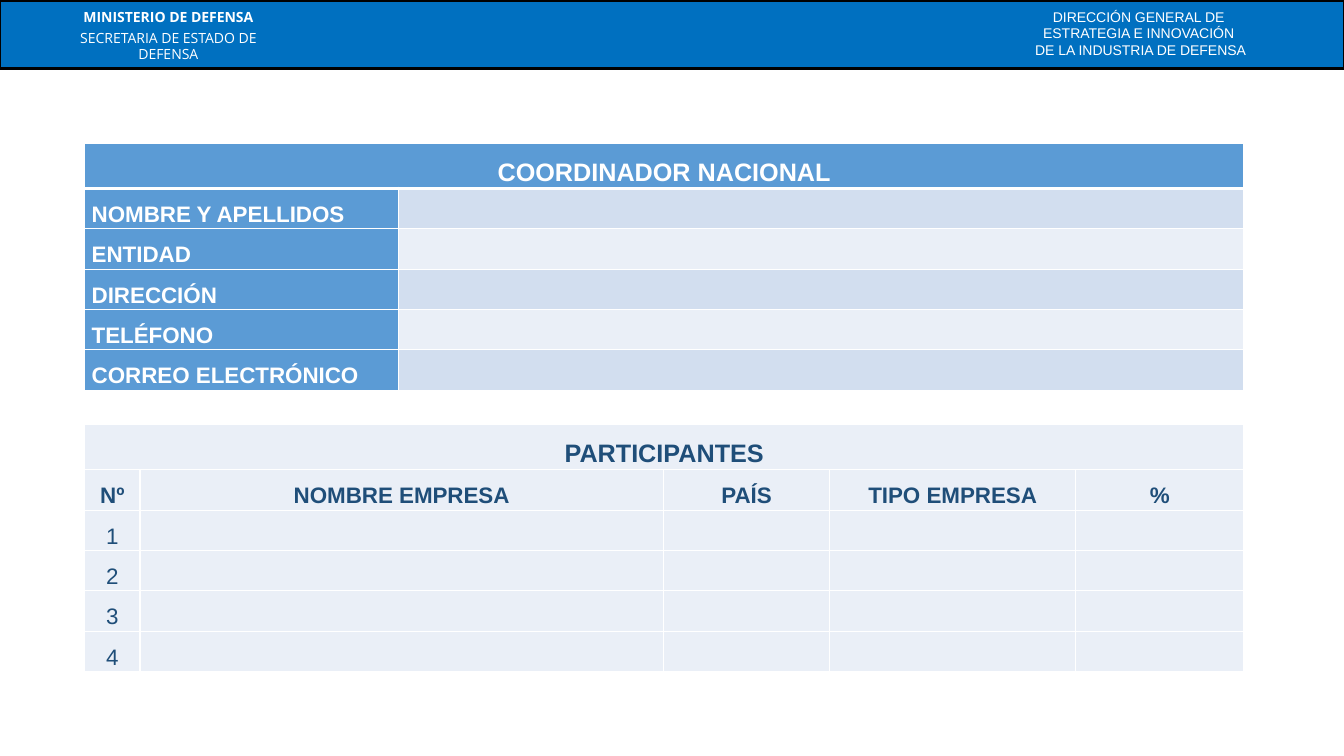
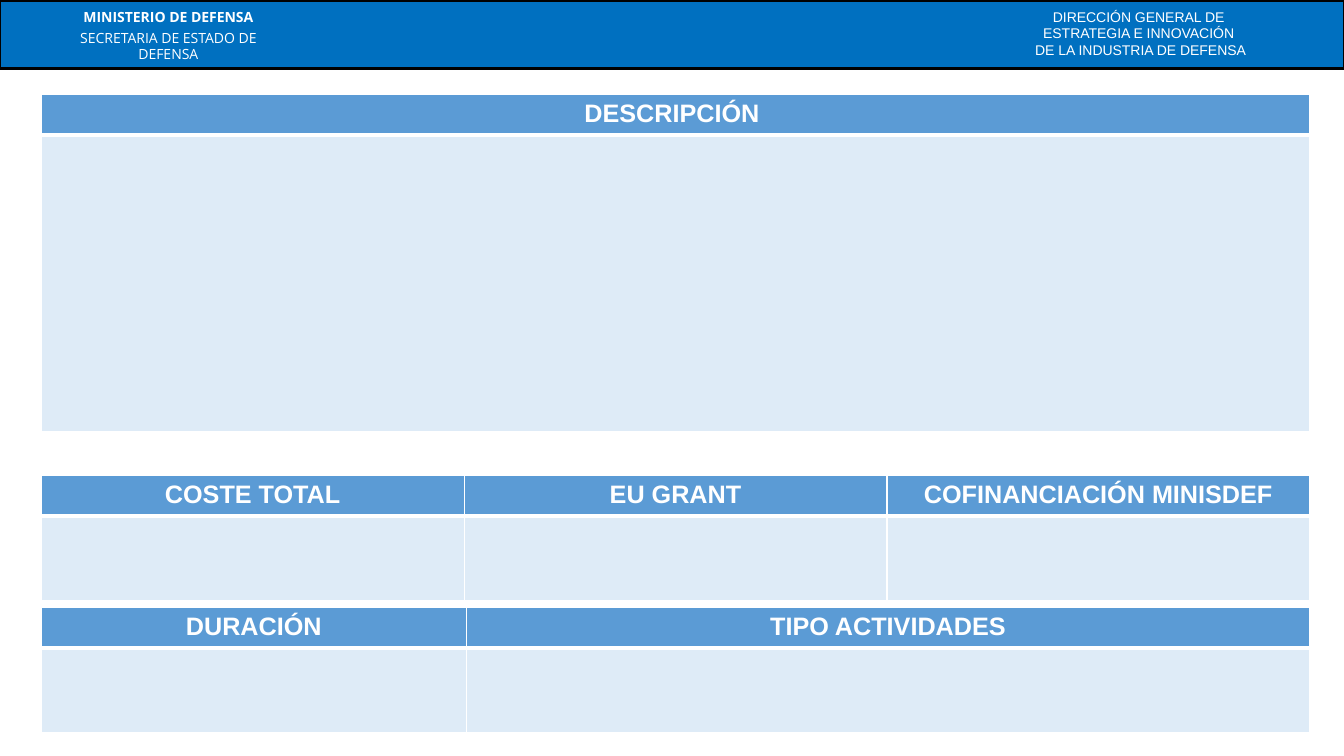
from dataclasses import dataclass, field

from lxml import etree
from pptx import Presentation
from pptx.dml.color import RGBColor
from pptx.enum.shapes import MSO_SHAPE
from pptx.enum.text import MSO_ANCHOR, MSO_AUTO_SIZE, PP_ALIGN
from pptx.oxml.ns import qn
from pptx.util import Emu, Inches, Pt

CENTER, LEFT = PP_ALIGN.CENTER, PP_ALIGN.LEFT
TOP, MIDDLE = MSO_ANCHOR.TOP, MSO_ANCHOR.MIDDLE
RECTANGLE = MSO_SHAPE.RECTANGLE
GROW = MSO_AUTO_SIZE.SHAPE_TO_FIT_TEXT

# The slide is a grid of 160 x 90 square cells
GRID_COLS, GRID_ROWS = 160, 90
SLIDE_WIDTH = Inches(13.33)
CELL = SLIDE_WIDTH / GRID_COLS

# Palette
WHITE, BLACK, NAVY = "FFFFFF", "000000", "1F4E79"
BAND_BLUE, HEAD_BLUE = "0070C0", "5B9BD5"
MIST, PALE, ICE = "D2DEEF", "EAEFF7", "DEEBF7"

THIN, THICK = 1, 3


@dataclass(frozen=True)
class Look:
    fill: str
    color: str = WHITE
    size: float = 18
    bold: bool = True
    align: PP_ALIGN = CENTER


@dataclass(frozen=True)
class Row:
    height: float
    texts: list[str]
    looks: list[Look]
    merged: bool = False
    rule_below: float = THIN


@dataclass(frozen=True)
class FormTable:
    left: float
    top: float
    columns: list[float]
    rows: list[Row]
    line_spacing: float = 1.0
    cell_format: dict = field(default_factory=dict)


@dataclass(frozen=True)
class HeaderText:
    area: tuple[float, float, float, float]
    font: str
    lines: list[str]
    bold_first: bool = False
    gap: float = 0


def grid(count: float) -> Emu:
    return Emu(round(count * CELL))


def rgb(value: str) -> RGBColor:
    return RGBColor.from_string(value)


def apply(target, values: dict) -> None:
    for name, value in values.items():
        setattr(target, name, value)


def style_font(font, face: str, size: float, color: str, bold: bool) -> None:
    apply(font, {"name": face, "size": Pt(size), "bold": bold})
    font.color.rgb = rgb(color)


# Header shared by the slides
HEADER_TEXTS = [
    HeaderText((9.36, 0.96, 21.36, 6.6), "Open Sans",
               ["MINISTERIO DE DEFENSA", "SECRETARIA DE ESTADO DE DEFENSA"],
               bold_first=True, gap=3),
    HeaderText((119.16, 0.96, 33.24, 6), "Arial",
               ["DIRECCIÓN GENERAL DE ", "ESTRATEGIA E INNOVACIÓN ",
                "DE LA INDUSTRIA DE DEFENSA"]),
]


def draw_header(slide) -> None:
    band = slide.shapes.add_shape(
        RECTANGLE, *map(grid, (0, 0.12, GRID_COLS, 8.04)))
    band.shadow.inherit = False
    band.fill.solid()
    band.fill.fore_color.rgb = rgb(BAND_BLUE)
    band.line.color.rgb = rgb(BLACK)
    band.line.width = Pt(2)
    for item in HEADER_TEXTS:
        frame = slide.shapes.add_textbox(*map(grid, item.area)).text_frame
        apply(frame, {"word_wrap": True, "auto_size": GROW,
                      "margin_left": 0, "margin_right": 0,
                      "margin_top": 0, "margin_bottom": 0})
        for index, line in enumerate(item.lines):
            paragraph = frame.paragraphs[0] if index == 0 else frame.add_paragraph()
            paragraph.alignment = CENTER
            if index == 0:
                paragraph.space_after = Pt(item.gap)
            run = paragraph.add_run()
            run.text = line
            style_font(run.font, item.font, 10, WHITE,
                       item.bold_first and index == 0)


def set_borders(cell, above: float, below: float) -> None:
    properties = cell._tc.get_or_add_tcPr()
    widths = {"a:lnL": THIN, "a:lnR": THIN, "a:lnT": above, "a:lnB": below}
    for tag, width in widths.items():
        line = etree.SubElement(properties, qn(tag), w=str(Pt(width)))
        fill = etree.SubElement(line, qn("a:solidFill"))
        etree.SubElement(fill, qn("a:srgbClr"), val=WHITE)


def draw_table(slide, form: FormTable) -> None:
    width, height = sum(form.columns), sum(row.height for row in form.rows)
    table = slide.shapes.add_table(
        len(form.rows), len(form.columns),
        *map(grid, (form.left, form.top, width, height))).table
    for column, share in zip(table.columns, form.columns):
        column.width = grid(share)
    above = THIN
    for r, row in enumerate(form.rows):
        table.rows[r].height = grid(row.height)
        for c, (text, look) in enumerate(zip(row.texts, row.looks)):
            cell = table.cell(r, c)
            set_borders(cell, above, row.rule_below)
            cell.fill.solid()
            cell.fill.fore_color.rgb = rgb(look.fill)
            apply(cell, form.cell_format)
            if text:
                paragraph = cell.text_frame.paragraphs[0]
                apply(paragraph, {"alignment": look.align,
                                  "line_spacing": form.line_spacing})
                run = paragraph.add_run()
                run.text = text
                style_font(run.font, "Arial", look.size, look.color, look.bold)
        if row.merged:
            table.cell(r, 0).merge(table.cell(r, len(form.columns) - 1))
        above = row.rule_below


# Slide 1: coordinator and participants
TITLE_ROW, FORM_ROW = 5.4, 4.8
HEADING = Look(HEAD_BLUE)
FIELD = Look(HEAD_BLUE, size=16, align=LEFT)
GROUP = Look(PALE, NAVY)
COLUMN_HEAD = Look(PALE, NAVY, 16)
ENTRY = Look(PALE, NAVY, 16, bold=False)
TIGHT = {"vertical_anchor": MIDDLE, "margin_left": Inches(0.07),
         "margin_right": Inches(0.07), "margin_top": 0, "margin_bottom": 0}


def coordinator() -> FormTable:
    fields = ["NOMBRE Y APELLIDOS", "ENTIDAD", "DIRECCIÓN", "TELÉFONO",
              "CORREO ELECTRÓNICO"]
    rows = [Row(TITLE_ROW, ["COORDINADOR NACIONAL", ""], [HEADING] * 2,
                merged=True, rule_below=THICK)]
    rows += [Row(FORM_ROW, [name, ""], [FIELD, Look((MIST, PALE)[i % 2])])
             for i, name in enumerate(fields)]
    return FormTable(10.08, 17.04, [37.4, 100.6], rows, 1.5, TIGHT)


def participants() -> FormTable:
    heads = ["Nº", "NOMBRE EMPRESA", "PAÍS", "TIPO EMPRESA", "%"]
    count = len(heads)
    blanks = [""] * (count - 1)
    rows = [Row(TITLE_ROW, ["PARTICIPANTES", *blanks], [GROUP] * count,
                merged=True),
            Row(FORM_ROW, heads, [COLUMN_HEAD] * count)]
    rows += [Row(FORM_ROW, [str(number), *blanks], [ENTRY] * count)
             for number in range(1, 5)]
    return FormTable(10.08, 50.52, [6.6, 62.3, 19.8, 29.3, 20], rows, 1.5, TIGHT)


# Slide 2: description, budget and activities
PANEL_WIDTH = 151


def panel(top: float, body: float, columns: list[float],
          heads: list[str]) -> FormTable:
    count = len(heads)
    rows = [Row(4.8, heads, [HEADING] * count, rule_below=THICK),
            Row(body, [""] * count, [Look(ICE)] * count)]
    return FormTable(4.92, top, columns, rows, 1.0, {"vertical_anchor": TOP})


def main() -> None:
    deck = Presentation()
    deck.slide_width = SLIDE_WIDTH
    deck.slide_height = grid(GRID_ROWS)
    blank = deck.slide_layouts[6]
    slides = [
        [participants(), coordinator()],
        [panel(11.28, 35.28, [PANEL_WIDTH], ["DESCRIPCIÓN "]),
         panel(72.36, 10.08, [50.6, 100.4], ["DURACIÓN", "TIPO ACTIVIDADES"]),
         panel(56.64, 10.08, [PANEL_WIDTH / 3] * 3,
               ["COSTE TOTAL", "EU GRANT", "COFINANCIACIÓN MINISDEF"])],
    ]
    for forms in slides:
        slide = deck.slides.add_slide(blank)
        draw_header(slide)
        for form in forms:
            draw_table(slide, form)
    deck.save("out.pptx")


if __name__ == "__main__":
    main()
